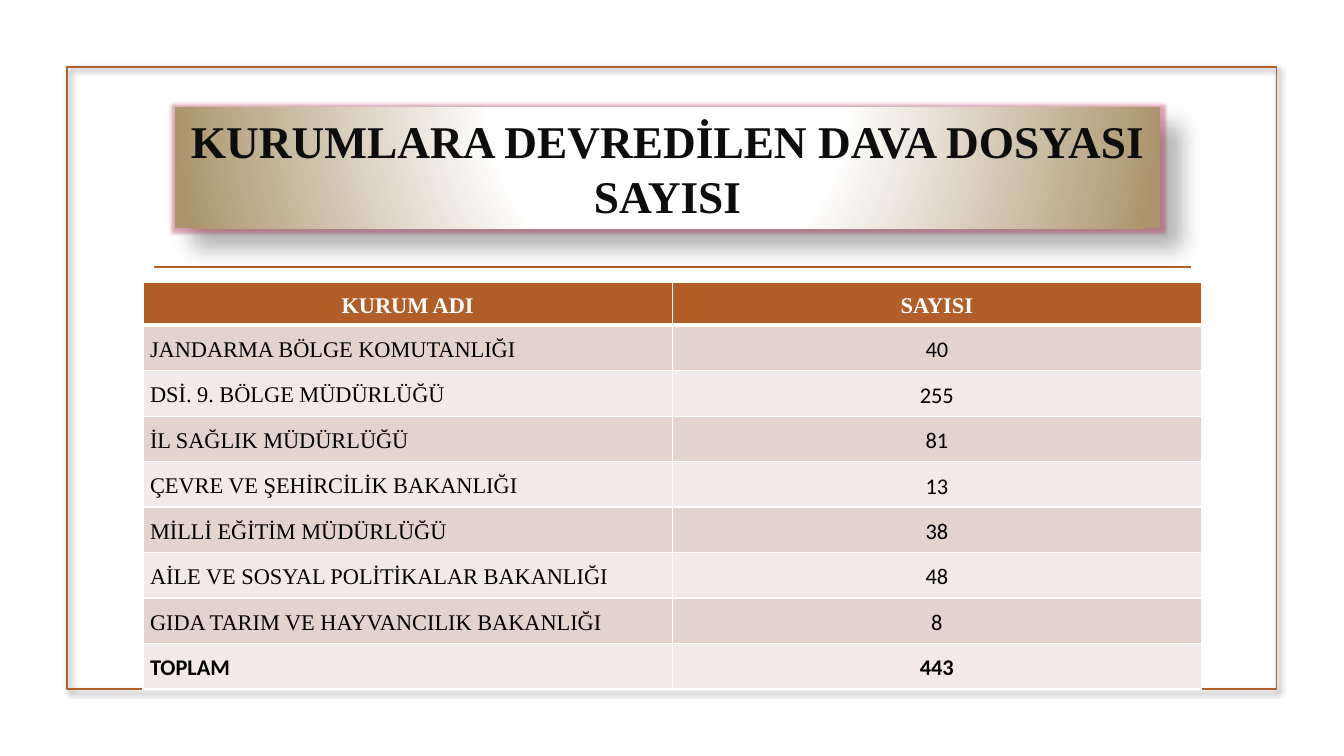
from lxml import etree
from pptx import Presentation
from pptx.dml.color import RGBColor
from pptx.enum.shapes import MSO_CONNECTOR, MSO_SHAPE
from pptx.enum.text import MSO_ANCHOR, PP_ALIGN
from pptx.oxml import parse_xml
from pptx.oxml.ns import nsdecls, qn
from pptx.util import Pt

RUST = RGBColor(0xB1, 0x5E, 0x28)
ROSE = RGBColor(0xE4, 0xD2, 0xCD)
PALE = RGBColor(0xF2, 0xEA, 0xE8)
WHITE = RGBColor(0xFF, 0xFF, 0xFF)
BLACK = RGBColor(0, 0, 0)
INK = RGBColor(0x0D, 0x0D, 0x0D)
SERIF, SANS = "Times New Roman", "Calibri"


def set_effects(sp, blur, dist, alpha, glow=""):
    spPr = sp._element.spPr
    for old in spPr.findall(qn("a:effectLst")):
        spPr.remove(old)
    spPr.append(parse_xml(
        f'<a:effectLst {nsdecls("a")}>{glow}'
        f'<a:outerShdw blurRad="{Pt(blur)}" dist="{Pt(dist)}" dir="2700000" '
        f'algn="tl" rotWithShape="0"><a:srgbClr val="000000">'
        f'<a:alpha val="{alpha * 1000}"/></a:srgbClr></a:outerShdw></a:effectLst>'))


def add_text(tf, text, font, size, color, bold, align):
    p = tf.paragraphs[0]
    p.alignment = align
    r = p.add_run()
    r.text = text
    r.font.name = font
    r.font.size = Pt(size)
    r.font.bold = bold
    r.font.color.rgb = color
    return p


prs = Presentation()
prs.slide_width, prs.slide_height = Pt(960), Pt(540)
s = prs.slides.add_slide(prs.slide_layouts[6])

frame = s.shapes.add_shape(MSO_SHAPE.RECTANGLE, Pt(47.8), Pt(48), Pt(864), Pt(444.2))
frame.fill.background()
frame.line.color.rgb = RUST
frame.line.width = Pt(1.25)
set_effects(frame, 4, 3, 60)

rule = s.shapes.add_connector(MSO_CONNECTOR.STRAIGHT, Pt(110), Pt(190.8), Pt(850.5), Pt(190.8))
rule.line.color.rgb = RUST
rule.line.width = Pt(1.25)
etree.SubElement(rule._element.spPr, qn("a:effectLst"))

rows = [
    ("KURUM ADI", "SAYISI"),
    ("JANDARMA BÖLGE KOMUTANLIĞI", "40"),
    ("DSİ. 9. BÖLGE MÜDÜRLÜĞÜ", "255"),
    ("İL SAĞLIK MÜDÜRLÜĞÜ", "81"),
    ("ÇEVRE VE ŞEHİRCİLİK BAKANLIĞI", "13"),
    ("MİLLİ EĞİTİM MÜDÜRLÜĞÜ", "38"),
    ("AİLE VE SOSYAL POLİTİKALAR BAKANLIĞI", "48"),
    ("GIDA TARIM VE HAYVANCILIK BAKANLIĞI", "8"),
    ("TOPLAM", "443"),
]
last = len(rows) - 1
table = s.shapes.add_table(len(rows), 2, Pt(102.2), Pt(201.8), Pt(756), Pt(286.8)).table
for i, row in enumerate(rows):
    table.rows[i].height = Pt(30 if i == 0 else 32.1)
    for j, text in enumerate(row):
        cell = table.cell(i, j)
        cell.vertical_anchor = MSO_ANCHOR.MIDDLE
        cell.margin_left = cell.margin_right = Pt(5)
        cell.margin_top = cell.margin_bottom = Pt(5)
        font = SERIF if i == 0 or (j == 0 and i < last) else SANS
        align = PP_ALIGN.CENTER if i == 0 or j == 1 else PP_ALIGN.LEFT
        p = add_text(cell.text_frame, text, font, 16, BLACK if i else WHITE,
                     i in (0, last), align)
        p.line_spacing = 1.15
        tcPr = cell._tc.get_or_add_tcPr()
        for side in "LRTB":
            thick = (i == 0 and side == "B") or (i == 1 and side == "T")
            tcPr.append(parse_xml(
                f'<a:ln{side} {nsdecls("a")} w="{Pt(3 if thick else 1)}"><a:solidFill>'
                f'<a:srgbClr val="{WHITE}"/></a:solidFill></a:ln{side}>'))
        cell.fill.solid()
        cell.fill.fore_color.rgb = RUST if i == 0 else ROSE if i % 2 else PALE

title = s.shapes.add_shape(MSO_SHAPE.ROUNDED_RECTANGLE, Pt(124.8), Pt(77), Pt(704), Pt(86))
title.adjustments[0] = 0
title.line.fill.background()
title.fill.background()
spPr = title._element.spPr
spPr.replace(spPr.find(qn("a:noFill")), parse_xml(
    f'<a:gradFill {nsdecls("a")} rotWithShape="1"><a:gsLst>'
    '<a:gs pos="0"><a:srgbClr val="FFFFFF"/></a:gs>'
    '<a:gs pos="35000"><a:srgbClr val="FFFFFF"/></a:gs>'
    '<a:gs pos="100000"><a:srgbClr val="AB946B"/></a:gs></a:gsLst>'
    '<a:path path="circle"><a:fillToRect l="50000" t="-80000" r="50000" b="180000"/>'
    '</a:path></a:gradFill>'))
set_effects(title, 15, 18, 30,
            f'<a:glow rad="{Pt(5)}"><a:srgbClr val="B03A5B">'
            '<a:alpha val="45000"/></a:srgbClr></a:glow>')
tf = title.text_frame
tf.word_wrap = True
tf.vertical_anchor = MSO_ANCHOR.MIDDLE
add_text(tf, "KURUMLARA DEVREDİLEN DAVA DOSYASI SAYISI", SERIF, 32.4, INK, True, PP_ALIGN.CENTER)

prs.save("out.pptx")
